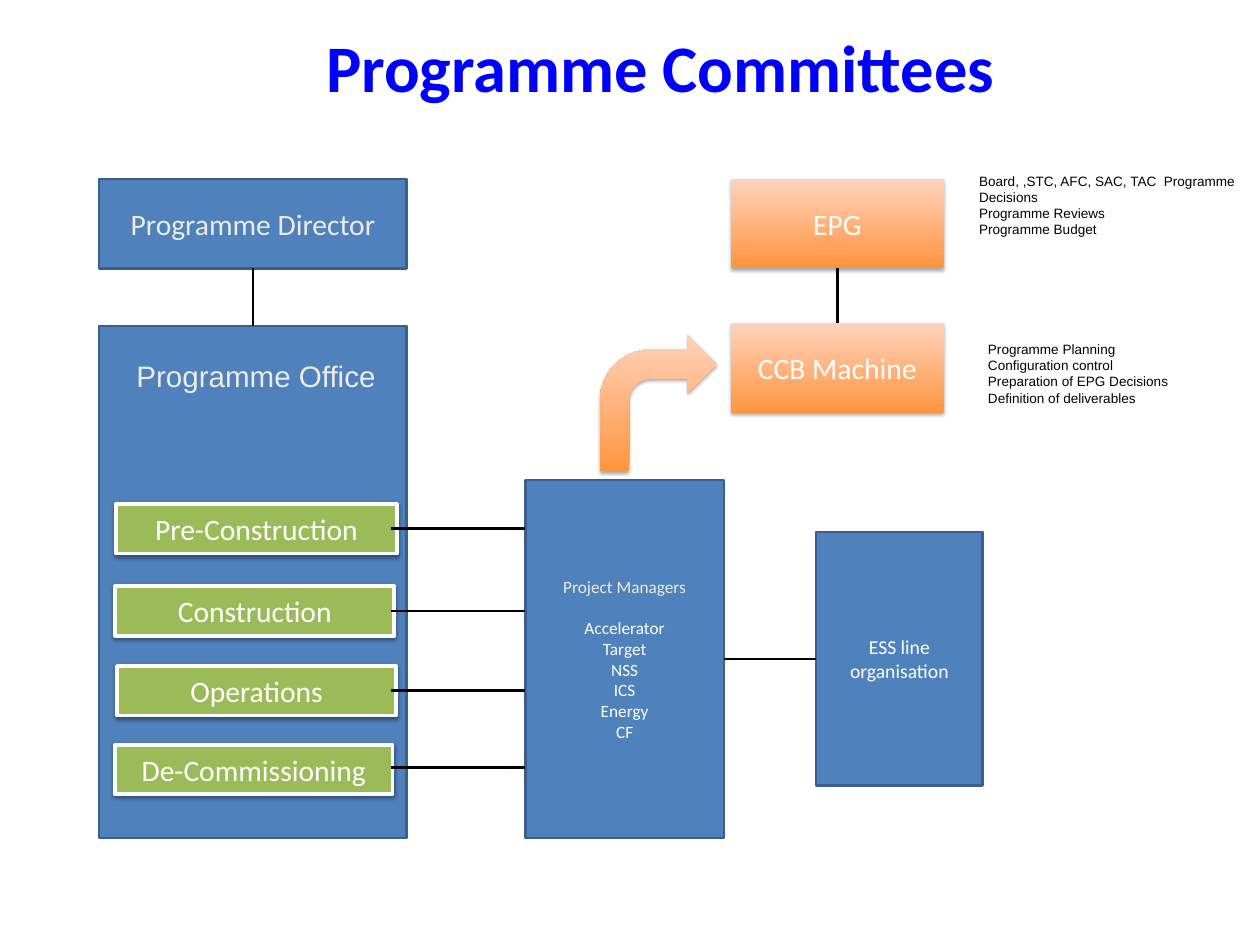
from lxml import etree
from pptx import Presentation
from pptx import util as u
from pptx.dml.color import RGBColor
from pptx.enum import shapes, text
from pptx.oxml.ns import qn

PX = 9144

BLUE = RGBColor(0x4F, 0x81, 0xBD)
DARK_BLUE = RGBColor(0x3A, 0x5F, 0x8C)
GREEN = RGBColor(0x9B, 0xBB, 0x59)
ORANGE = RGBColor(0xFF, 0x95, 0x3E)
PEACH = RGBColor(0xFF, 0xD2, 0xBD)
CREAM = RGBColor(0xEE, 0xEC, 0xE1)
WHITE = RGBColor(0xFF, 0xFF, 0xFF)
BLACK = RGBColor(0x00, 0x00, 0x00)
TITLE_BLUE = RGBColor(0x00, 0x00, 0xFF)


class Chart:
    def __init__(self, slide):
        self.items = slide.shapes

    def fill_text(self, shape, lines, size, color, font, align=None, bold=None):
        frame = shape.text_frame
        frame.margin_left = frame.margin_right = 14 * PX
        frame.margin_top = frame.margin_bottom = 7 * PX
        frame.text = "\n".join(lines)
        for paragraph in frame.paragraphs:
            paragraph.alignment = align
            for run in paragraph.runs:
                run.font.name = font
                run.font.size = u.Pt(size)
                run.font.bold = bold
                run.font.color.rgb = color
        return frame

    def shape(self, kind, box):
        shape = self.items.add_shape(kind, *(v * PX for v in box))
        shape.shadow.inherit = False
        return shape

    def label(self, shape, lines, size, color):
        frame = self.fill_text(shape, lines, size, color, "Calibri", text.PP_ALIGN.CENTER)
        frame.vertical_anchor = text.MSO_ANCHOR.MIDDLE
        frame.word_wrap = True

    def shade(self, shape, opacity, distance):
        effects = shape._element.spPr.find(qn("a:effectLst"))
        shadow = etree.SubElement(
            effects, qn("a:outerShdw"), blurRad=str(u.Pt(3.1)),
            dist=str(u.Pt(distance)), dir="5400000", rotWithShape="0")
        tone = etree.SubElement(shadow, qn("a:srgbClr"), val=str(BLACK))
        etree.SubElement(tone, qn("a:alpha"), val=str(opacity * 1000))

    def solid(self, box, lines=(), size=24, color=WHITE, fill=BLUE, edge=DARK_BLUE, width=2):
        shape = self.shape(shapes.MSO_SHAPE.RECTANGLE, box)
        shape.fill.solid()
        shape.fill.fore_color.rgb = fill
        shape.line.color.rgb = edge
        shape.line.width = u.Pt(width)
        self.label(shape, lines, size, color)
        return shape

    def phase(self, box, name):
        shape = self.solid(box, [name], fill=GREEN, edge=WHITE, width=3)
        self.shade(shape, 38, 1.6)

    def glow(self, box, lines=(), kind=shapes.MSO_SHAPE.RECTANGLE):
        shape = self.shape(kind, box)
        shape.fill.gradient()
        shape.fill.gradient_angle = 90
        for stop, color in zip(shape.fill.gradient_stops, (ORANGE, PEACH)):
            stop.color.rgb = color
        shape.line.fill.background()
        self.shade(shape, 35, 1.8)
        self.label(shape, lines, 24, WHITE)
        return shape

    def note(self, box, lines, size=11, color=BLACK, font="Arial", bold=None, wrap=True):
        shape = self.items.add_textbox(*(v * PX for v in box))
        frame = self.fill_text(shape, lines, size, color, font, bold=bold)
        frame.word_wrap = wrap
        frame.auto_size = text.MSO_AUTO_SIZE.SHAPE_TO_FIT_TEXT
        return frame

    def line(self, x1, y1, x2, y2):
        line = self.items.add_connector(
            shapes.MSO_CONNECTOR.STRAIGHT, *(v * PX for v in (x1, y1, x2, y2)))
        line.line.color.rgb = BLACK
        line.line.width = u.Pt(2.25)
        etree.SubElement(line._element.spPr, qn("a:effectLst"))
        return line

    def join(self, start, start_side, end, end_side):
        line = self.line(0, 0, 0, 0)
        line.begin_connect(start, start_side)
        line.end_connect(end, end_side)


def main():
    deck = Presentation()
    deck.slide_width = 1422 * PX
    deck.slide_height = 1067 * PX
    chart = Chart(deck.slides.add_slide(deck.slide_layouts[6]))

    epg = chart.glow((825, 202, 240, 101), ["EPG"])
    ccb = chart.glow((825, 365, 240, 101), ["CCB Machine"])
    director = chart.solid((112, 202, 347, 101), ["Programme Director"], color=CREAM)
    office = chart.solid((112, 368, 347, 578))

    chart.note((354, 23, 1030, 105), ["Programme Committees"], 54, TITLE_BLUE, "Calibri", True)
    chart.note((1091, 188, 331, 91), [
        "Board, ,STC, AFC, SAC, TAC  Programme Decisions",
        "Programme Reviews", "Programme Budget"])
    chart.note((1101, 378, 241, 110), [
        "Programme Planning", "Configuration control",
        "Preparation of EPG Decisions", "Definition of deliverables"], wrap=False)
    office_title = chart.note((112, 397, 347, 55), ["Programme Office"], 24, CREAM)
    office_title.margin_left = 42 * PX

    managers = chart.solid((593, 542, 224, 404), [
        "Project Managers", "Accelerator", "Target", "NSS", "ICS", "Energy", "CF"], 14)
    heading, first_project = managers.text_frame.paragraphs[:2]
    heading.runs[0].font.color.rgb = CREAM
    first_project.space_before = u.Pt(17)
    line_organisation = chart.solid((921, 601, 188, 286), ["ESS line organisation"], 16)

    phases = [
        ("Pre-Construction", 131, 569, 317, 597),
        ("Construction", 130, 662, 315, 690),
        ("Operations", 132, 752, 315, 780),
        ("De-Commissioning", 130, 841, 313, 867),
    ]
    for name, left, top, width, link_y in phases:
        chart.phase((left, top, width, 56), name)
        chart.line(441, link_y, 593, link_y)

    chart.join(director, 2, office, 0)
    chart.join(managers, 3, line_organisation, 1)
    chart.join(epg, 2, ccb, 0)
    chart.glow((677, 378, 132, 154), kind=shapes.MSO_SHAPE.BENT_ARROW)

    deck.save("out.pptx")


if __name__ == "__main__":
    main()
